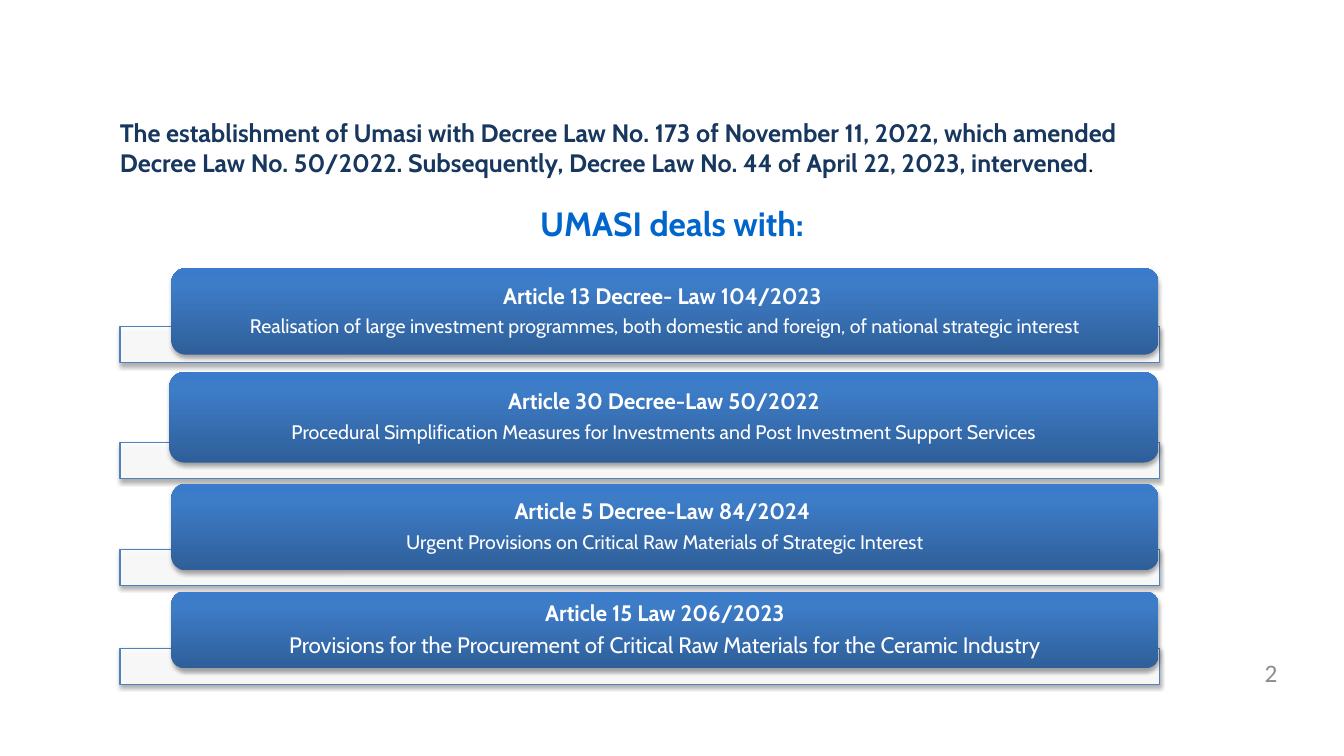
from pptx import Presentation
from pptx import util as u
from pptx.dml.color import RGBColor
from pptx.enum import shapes, text
from pptx.oxml import parse_xml
from pptx.oxml.ns import nsdecls, qn

# Style
FONT = "Cabin"
NUMBER_FONT = "Calibri"
TITLE_BLUE = "0066CC"
NAVY = "17375E"
LINE_BLUE = "4F81BD"
GREY = "8C8C8C"
WHITE = "FFFFFF"
BLACK = "000000"
BAR_STOPS = [(0, "2F5F99"), (80, "3D7CC7"), (100, "3A7CCB")]

# Article, subject, subject size, strip top, bar left, bar top, bar height
ARTICLES = [
    ("Article 13 Decree- Law 104/2023 ",
     "Realisation of large investment programmes, both domestic and foreign, "
     "of national strategic interest", 14, 3.24, 1.7, 2.66, 0.86),
    ("Article 30 Decree-Law 50/2022",
     "Procedural Simplification Measures for Investments and Post Investment "
     "Support Services", 14, 4.39, 1.68, 3.69, 0.9),
    ("Article 5 Decree-Law 84/2024 ",
     "Urgent Provisions on Critical Raw Materials of Strategic Interest",
     14, 5.45, 1.7, 4.8, 0.86),
    ("Article 15 Law 206/2023",
     "Provisions for the Procurement of Critical Raw Materials for the "
     "Ceramic Industry", 16, 6.43, 1.7, 5.87, 0.76),
]
STRIP_LEFT, STRIP_WIDTH, STRIP_HEIGHT = 1.19, 10.31, 0.36
BAR_RIGHT = 11.49


def color(hex_string):
    return RGBColor.from_string(hex_string)


class SlideBuilder:
    def __init__(self, presentation):
        self.slide = presentation.slides.add_slide(presentation.slide_layouts[5])

    def format_run(self, run, size, hex_string, bold=False, font=FONT):
        run.font.name = font
        run.font.size = u.Pt(size)
        run.font.bold = bold
        run.font.color.rgb = color(hex_string)

    def set_frame(self, frame, side=0.0, top=0.0, anchor=text.MSO_ANCHOR.TOP):
        frame.word_wrap = True
        frame.auto_size = text.MSO_AUTO_SIZE.NONE
        frame.vertical_anchor = anchor
        frame.margin_left = frame.margin_right = u.Inches(side)
        frame.margin_top = frame.margin_bottom = u.Inches(top)

    def title(self, words, left, top, width, height):
        title = self.slide.shapes.title
        title.left, title.top = u.Inches(left), u.Inches(top)
        title.width, title.height = u.Inches(width), u.Inches(height)
        self.set_frame(title.text_frame)
        title.text_frame.text = words
        paragraph = title.text_frame.paragraphs[0]
        paragraph.alignment = text.PP_ALIGN.CENTER
        self.format_run(paragraph.runs[0], 24, TITLE_BLUE, True)

    def text_box(self, left, top, width, height, side=0.0, inset=0.0):
        box = self.slide.shapes.add_textbox(
            u.Inches(left), u.Inches(top), u.Inches(width), u.Inches(height))
        self.set_frame(box.text_frame, side, inset)
        return box.text_frame.paragraphs[0]

    def shadowed_shape(self, kind, left, top, width, height):
        shape = self.slide.shapes.add_shape(
            kind, u.Inches(left), u.Inches(top), u.Inches(width), u.Inches(height))
        shape.shadow.inherit = False
        shape._element.spPr.find(qn("a:effectLst")).append(parse_xml(
            f'<a:outerShdw {nsdecls("a")} blurRad="{u.Pt(3.1)}" dist="{u.Pt(1.8)}" '
            f'dir="5400000" rotWithShape="0"><a:srgbClr val="{BLACK}">'
            '<a:alpha val="35000"/></a:srgbClr></a:outerShdw>'))
        return shape

    def strip(self, top):
        shape = self.shadowed_shape(shapes.MSO_SHAPE.RECTANGLE, STRIP_LEFT, top,
                                    STRIP_WIDTH, STRIP_HEIGHT)
        shape.fill.solid()
        shape.fill.fore_color.rgb = color(WHITE)
        fill_color = shape._element.spPr.find(qn("a:solidFill"))[0]
        fill_color.append(parse_xml(f'<a:alpha {nsdecls("a")} val="90000"/>'))
        shape.line.color.rgb = color(LINE_BLUE)
        shape.line.width = u.Pt(0.75)

    def bar(self, article, subject, subject_size, left, top, height):
        shape = self.shadowed_shape(shapes.MSO_SHAPE.ROUNDED_RECTANGLE, left, top,
                                    BAR_RIGHT - left, height)
        shape.line.fill.background()
        shape.fill.gradient()
        shape.fill.gradient_angle = 90
        stops = shape._element.spPr.find(qn("a:gradFill")).find(qn("a:gsLst"))
        for stop in list(stops):
            stops.remove(stop)
        for position, hex_string in BAR_STOPS:
            stops.append(parse_xml(
                f'<a:gs {nsdecls("a")} pos="{position * 1000}">'
                f'<a:srgbClr val="{hex_string}"/></a:gs>'))

        frame = shape.text_frame
        self.set_frame(frame, side=0.31, anchor=text.MSO_ANCHOR.MIDDLE)
        frame.text = f"{article}\n{subject}"
        for paragraph, size, bold in zip(frame.paragraphs, (16, subject_size),
                                         (True, False)):
            paragraph.alignment = text.PP_ALIGN.CENTER
            paragraph.line_spacing = 0.9
            self.format_run(paragraph.runs[0], size, WHITE, bold)
        frame.paragraphs[0].space_after = u.Pt(5.6)


def main():
    presentation = Presentation()
    presentation.slide_width = u.Inches(13.33)
    presentation.slide_height = u.Inches(7.5)
    builder = SlideBuilder(presentation)

    # Heading
    builder.title("UMASI deals with:", 0.41, 2.01, 12.51, 0.45)

    # Slide number
    number = builder.text_box(9.6, 6.52, 3.07, 0.38)
    number.text = "2"
    number.alignment = text.PP_ALIGN.RIGHT
    builder.format_run(number.runs[0], 18, GREY, font=NUMBER_FONT)

    # Articles
    for article, subject, size, strip_top, left, top, height in ARTICLES:
        builder.strip(strip_top)
        builder.bar(article, subject, size, left, top, height)

    # Introduction
    intro = builder.text_box(1.09, 1.11, 10.63, 1.01, side=0.1, inset=0.05)
    intro.text = ("The establishment of Umasi with Decree Law No. 173 of November 11, "
                  "2022, which amended Decree Law No. 50/2022. Subsequently, Decree "
                  "Law No. 44 of April 22, 2023, intervened")
    builder.format_run(intro.runs[0], 18, NAVY, True)
    full_stop = intro.add_run()
    full_stop.text = "."
    builder.format_run(full_stop, 16, BLACK, font=NUMBER_FONT)

    presentation.save("out.pptx")


if __name__ == "__main__":
    main()
